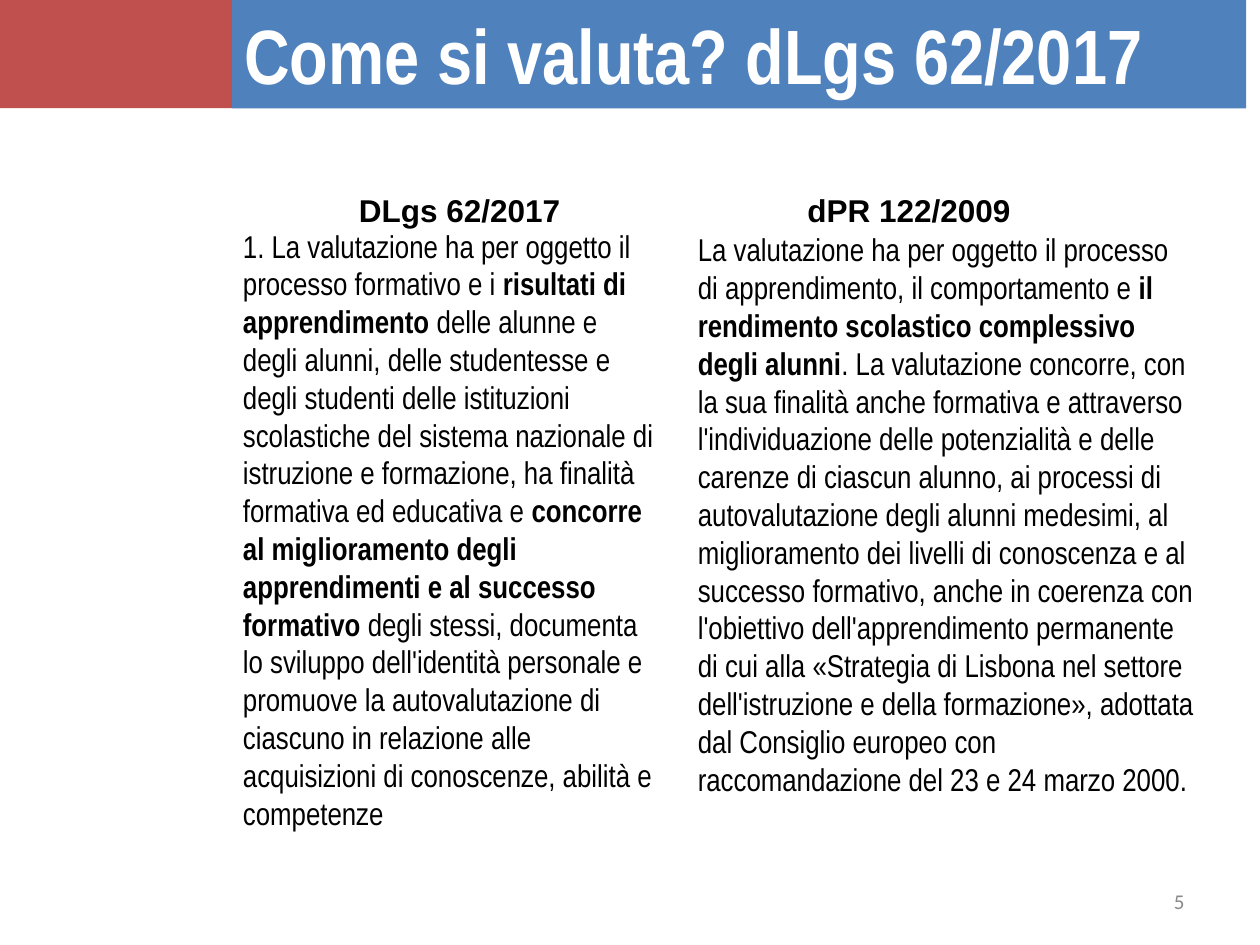
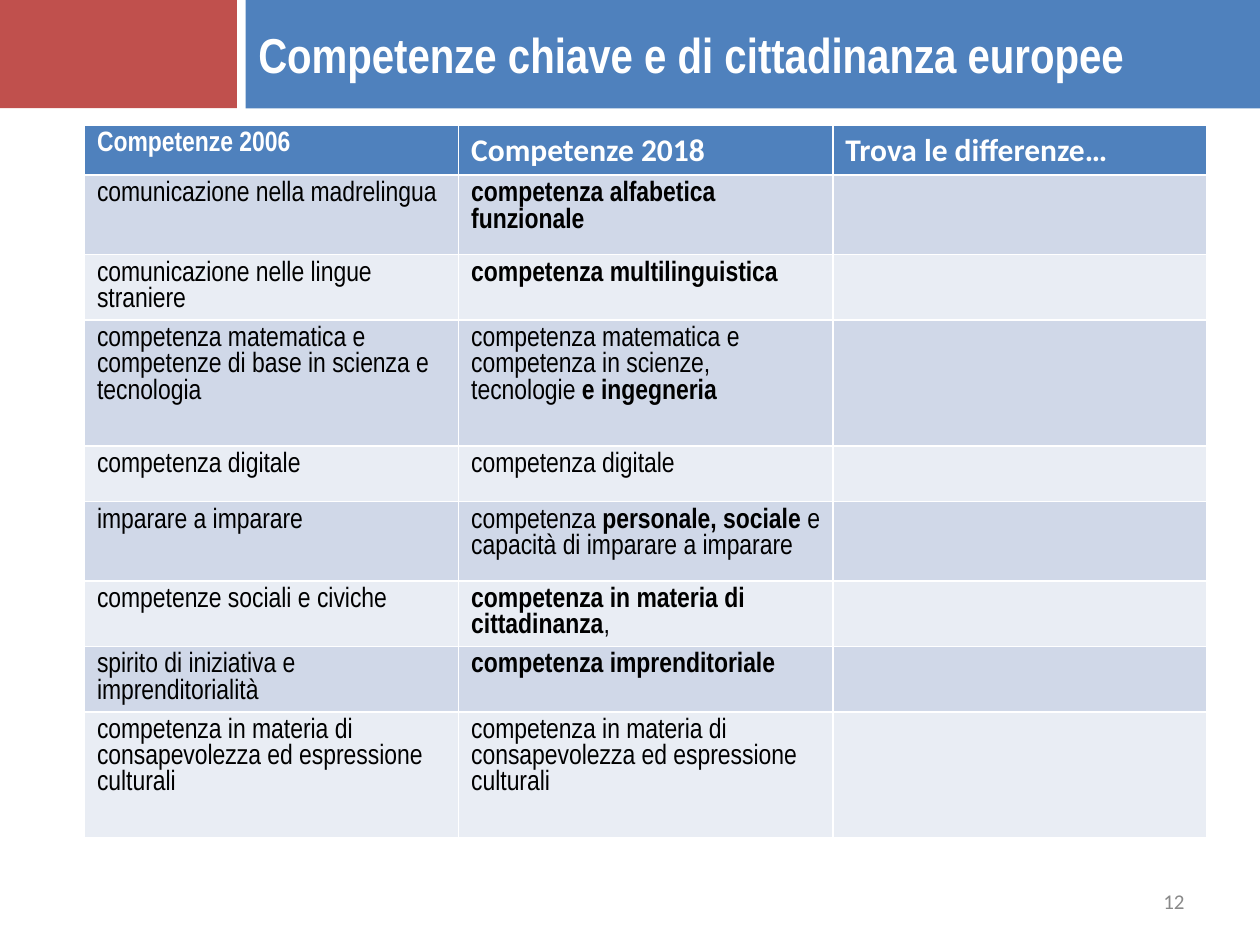
from pptx import Presentation
from pptx.dml.color import RGBColor
from pptx.enum.shapes import MSO_SHAPE
from pptx.enum.text import MSO_ANCHOR, MSO_AUTO_SIZE, PP_ALIGN
from pptx.util import Inches, Pt

# Content: **...** marks bold
LAW_TITLE = "Come si valuta? dLgs 62/2017"
LAWS = [
    {
        "heading": "DLgs 62/2017", "heading_at": (2.75, 1.47, 1.81, 0.4),
        "text_at": (1.83, 1.75, 3.46, 5.1),
        "text": "1. La valutazione ha per oggetto il processo formativo e i **risultati di "
                "apprendimento** delle alunne e degli alunni, delle studentesse e degli studenti "
                "delle istituzioni scolastiche del sistema nazionale di istruzione e formazione, "
                "ha finalità formativa ed educativa e **concorre al miglioramento degli "
                "apprendimenti e al successo formativo **degli stessi, documenta lo sviluppo "
                "dell'identità personale e promuove la autovalutazione di ciascuno in relazione "
                "alle acquisizioni di conoscenze, abilità e competenze",
    },
    {
        "heading": "dPR 122/2009", "heading_at": (6.31, 1.47, 1.83, 0.4),
        "text_at": (5.44, 1.78, 4.14, 4.64),
        "text": "La valutazione ha per oggetto il processo di apprendimento, il comportamento e "
                "**il rendimento scolastico complessivo degli alunni**. La valutazione concorre, "
                "con la sua finalità anche formativa e attraverso l'individuazione delle "
                "potenzialità e delle carenze di ciascun alunno, ai processi di autovalutazione "
                "degli alunni medesimi, al miglioramento dei livelli di conoscenza e al successo "
                "formativo, anche in coerenza con l'obiettivo dell'apprendimento permanente di "
                "cui alla «Strategia di Lisbona nel settore dell'istruzione e della formazione», "
                "adottata dal Consiglio europeo con raccomandazione del 23 e 24 marzo 2000.",
    },
]

SKILLS_TITLE = "Competenze chiave e di cittadinanza europee"
SKILLS_HEADER = ["Competenze 2006", "Competenze 2018", "Trova le differenze…"]
# Row height, 2006 wording, 2018 wording
SKILLS = [
    (0.63, "comunicazione nella madrelingua", "**competenza alfabetica funzionale**"),
    (0.52, "comunicazione nelle lingue straniere", "**competenza multilinguistica**"),
    (1.0, "competenza matematica e competenze di base in scienza e tecnologia",
     "competenza matematica e competenza in scienze, tecnologie** e ingegneria**"),
    (0.44, "competenza digitale", "competenza digitale"),
    (0.63, "imparare a imparare",
     "competenza **personale, sociale** e capacità di imparare a imparare"),
    (0.52, "competenze sociali e civiche", "**competenza in materia di cittadinanza**,"),
    (0.52, "spirito di iniziativa e imprenditorialità", "**competenza imprenditoriale**"),
    (1.0, "competenza in materia di consapevolezza ed espressione culturali",
     "competenza in materia di consapevolezza ed espressione culturali"),
]
HEADER_HEIGHT = 0.4
COLUMN_WIDTH = 2.97

# Shared look
RED = RGBColor(0xC0, 0x50, 0x4D)
BLUE = RGBColor(0x4F, 0x81, 0xBD)
WHITE = RGBColor(0xFF, 0xFF, 0xFF)
BLACK = RGBColor(0x00, 0x00, 0x00)
GREY = RGBColor(0x89, 0x89, 0x89)
ROW_FILLS = [RGBColor(0xD0, 0xD8, 0xE8), RGBColor(0xE9, 0xED, 0xF4)]
NARROW = "Arial Narrow"
BAND_HEIGHT = 0.86
RED_WIDTH = 1.88


def inches(box):
    return [Inches(value) for value in box]


def write(frame, text, size, color, font=NARROW, bold=False):
    """Fill the first paragraph, turning **...** into bold runs."""
    paragraph = frame.paragraphs[0]
    for index, part in enumerate(text.split("**")):
        if part:
            run = paragraph.add_run()
            run.text = part
            if "**" in text:
                run.font.bold = index % 2 == 1
    paragraph.font.size = Pt(size)
    paragraph.font.name = font
    paragraph.font.color.rgb = color
    if "**" not in text:
        paragraph.font.bold = bold
    return paragraph


def add_text(slide, box, text, size, color, wrap=True, **style):
    frame = slide.shapes.add_textbox(*inches(box)).text_frame
    frame.word_wrap = wrap
    return write(frame, text, size, color, **style)


def add_banded_slide(prs, title, size, blue_left, number):
    slide = prs.slides.add_slide(prs.slide_layouts[5])

    # Blue title band
    band = slide.shapes.title
    band.left, band.top, band.width, band.height = inches((blue_left, 0, 8.05, BAND_HEIGHT))
    band.fill.solid()
    band.fill.fore_color.rgb = BLUE
    band.text_frame.auto_size = MSO_AUTO_SIZE.NONE
    band.text_frame.vertical_anchor = MSO_ANCHOR.MIDDLE
    write(band.text_frame, title, size, WHITE, bold=True).alignment = PP_ALIGN.LEFT

    # Red corner, ending where the blue band begins if they would overlap
    corner_box = (0, 0, min(RED_WIDTH, blue_left), BAND_HEIGHT)
    corner = slide.shapes.add_shape(MSO_SHAPE.RECTANGLE, *inches(corner_box))
    corner.shadow.inherit = False
    corner.fill.solid()
    corner.fill.fore_color.rgb = RED
    corner.line.fill.background()

    # Page number
    page = add_text(slide, (7.17, 6.95, 2.33, 0.4), number, 12, GREY, font="Calibri")
    page.alignment = PP_ALIGN.RIGHT
    slide.shapes[-1].text_frame.vertical_anchor = MSO_ANCHOR.MIDDLE
    return slide


def build_laws(prs):
    slide = add_banded_slide(prs, LAW_TITLE, 44, 1.84, "5")
    for law in LAWS:
        add_text(slide, law["text_at"], law["text"], 18, BLACK)
        add_text(slide, law["heading_at"], law["heading"], 18, BLACK,
                 wrap=False, font="Arial", bold=True)


def build_skills(prs):
    slide = add_banded_slide(prs, SKILLS_TITLE, 28, 1.95, "12")
    heights = [HEADER_HEIGHT] + [height for height, *_ in SKILLS]
    columns = len(SKILLS_HEADER)
    box = (0.67, 0.99, COLUMN_WIDTH * columns, sum(heights))
    table = slide.shapes.add_table(len(heights), columns, *inches(box)).table
    for column in table.columns:
        column.width = Inches(COLUMN_WIDTH)
    for row, height in zip(table.rows, heights):
        row.height = Inches(height)

    # Header row
    for index, heading in enumerate(SKILLS_HEADER):
        cell = table.cell(0, index)
        cell.fill.solid()
        cell.fill.fore_color.rgb = BLUE
        size, font = (16, NARROW) if index == 0 else (18, "Calibri")
        paragraph = write(cell.text_frame, heading, size, WHITE, font=font, bold=True)
        if index == 0:
            paragraph.line_spacing = Pt(15)

    # Skill rows, with the last column left for the answers
    for number, (_, *wordings) in enumerate(SKILLS, start=1):
        for index in range(columns):
            cell = table.cell(number, index)
            cell.fill.solid()
            cell.fill.fore_color.rgb = ROW_FILLS[(number - 1) % 2]
            if index < len(wordings):
                paragraph = write(cell.text_frame, wordings[index], 16, BLACK)
                paragraph.line_spacing = Pt(15)


def main():
    prs = Presentation()
    prs.slide_width, prs.slide_height = Inches(10), Inches(7.5)
    build_laws(prs)
    build_skills(prs)
    prs.save("out.pptx")


if __name__ == "__main__":
    main()
